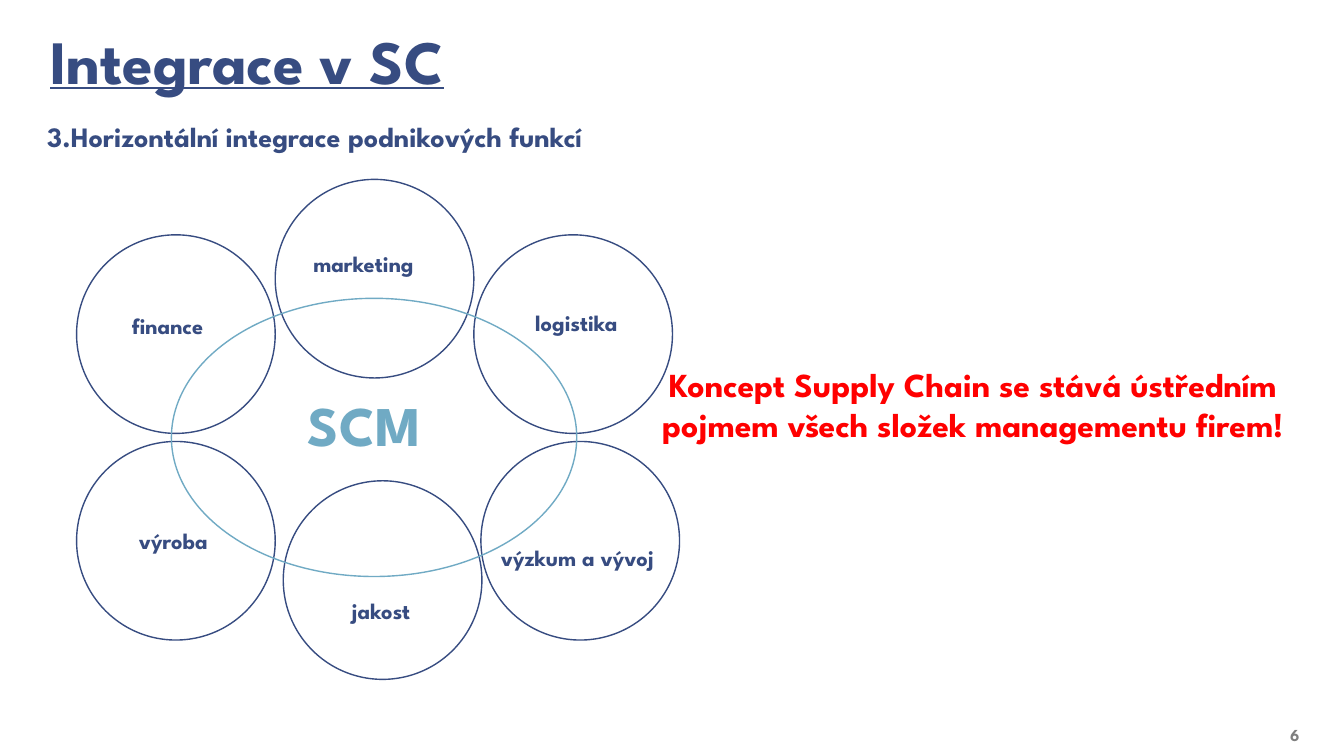
from dataclasses import dataclass

from pptx import Presentation
from pptx import util as u
from pptx.dml.color import RGBColor
from pptx.enum import shapes, text

PX = 9144  # EMU per px, 100 px to the inch


@dataclass(frozen=True)
class Theme:
    font: str = "League Spartan"
    navy: str = "374C81"
    sky: str = "70AAC4"
    red: str = "FF0000"
    grey: str = "7F7F7F"
    white: str = "FFFFFF"
    title: int = 44
    hub: int = 40
    message: int = 24
    heading: int = 20
    label: int = 16
    number: int = 12


THEME = Theme()
CIRCLE = 197
# function name, circle left and top, label offset inside the circle, label width
FUNCTIONS = [
    ("marketing", 197, 0, 28, 65, 130),
    ("logistika", 394, 55, 51, 69, 110),
    ("finance", 0, 55, 45, 72, 114),
    ("výroba", 0, 260, 52, 80, 102),
    ("jakost", 205, 299, 58, 111, 102),
    ("výzkum a vývoj", 401, 260, 10, 97, 231),
]


def to_emu(box):
    return [length * PX for length in box]


def write(shape, words, size, color=THEME.navy, align=text.PP_ALIGN.LEFT,
          anchor=text.MSO_ANCHOR.TOP, margins=(10, 5), underline=None, spacing=None):
    frame = shape.text_frame
    frame.word_wrap = True
    frame.auto_size = text.MSO_AUTO_SIZE.NONE
    frame.vertical_anchor = anchor
    frame.margin_left = frame.margin_right = margins[0] * PX
    frame.margin_top = frame.margin_bottom = margins[1] * PX
    para = frame.paragraphs[0]
    para.alignment = align
    para.line_spacing = spacing
    span = para.add_run()
    span.text = words
    span.font.name = THEME.font
    span.font.size = u.Pt(size)
    span.font.bold = True
    span.font.underline = underline
    span.font.color.rgb = RGBColor.from_string(color)


def add_text(page, box, words, size, **style):
    write(page.shapes.add_textbox(*to_emu(box)), words, size, **style)


def add_panel(page, box):
    panel = page.shapes.add_shape(shapes.MSO_SHAPE.RECTANGLE, *to_emu(box))
    panel.shadow.inherit = False
    panel.fill.solid()
    panel.fill.fore_color.rgb = RGBColor.from_string(THEME.white)
    panel.line.fill.background()
    return panel


def add_ring(page, box, color):
    ring = page.shapes.add_shape(shapes.MSO_SHAPE.OVAL, *to_emu(box))
    ring.shadow.inherit = False
    ring.fill.background()
    ring.line.color.rgb = RGBColor.from_string(color)
    ring.line.width = u.Pt(1)


def add_header(page, box):
    left, top, width, height = box
    title = page.shapes.title
    title.left, title.top, title.width, title.height = to_emu(box)
    write(title, "Integrace v SC", THEME.title, anchor=text.MSO_ANCHOR.BOTTOM,
          margins=(13, 7), underline=True, spacing=0.85)
    heading = add_panel(page, (left, top + height + 11, 622, 44))
    write(heading, "3.Horizontální integrace podnikových funkcí", THEME.heading)


def add_function_map(page, box):
    """Draw the company functions as circles around the SCM ellipse."""
    left, top, width, height = box
    for name, x, y, label_x, label_y, label_width in FUNCTIONS:
        x, y = left + x, top + y
        add_ring(page, (x, y, CIRCLE, CIRCLE), THEME.navy)
        add_text(page, (x + label_x, y + label_y, label_width, 37), name, THEME.label)
    add_ring(page, (left + 94, top + 118, width - 196, height - 220), THEME.sky)
    add_text(page, (left + 177, top + 205, 217, 77), "SCM", THEME.hub,
             color=THEME.sky, align=text.PP_ALIGN.CENTER)


def add_message(page, box):
    add_text(page, box,
             "Koncept Supply Chain se stává ústředním pojmem všech složek managementu firem!",
             THEME.message, color=THEME.red, align=text.PP_ALIGN.CENTER)


def add_page_number(page, box):
    add_text(page, box, "6", THEME.number, color=THEME.grey, align=text.PP_ALIGN.RIGHT,
             anchor=text.MSO_ANCHOR.BOTTOM, margins=(13, 7))


def main():
    deck = Presentation()
    deck.slide_width, deck.slide_height = to_emu((1333, 750))
    page = deck.slides.add_slide(deck.slide_layouts.get_by_name("Title Only"))
    page.background.fill.solid()
    page.background.fill.fore_color.rgb = RGBColor.from_string(THEME.white)
    add_header(page, (37, -50, 1111, 153))
    add_function_map(page, (76, 178, 598, 496))
    add_message(page, (632, 356, 666, 131))
    add_page_number(page, (1181, 711, 121, 35))
    deck.save("out.pptx")


if __name__ == "__main__":
    main()
